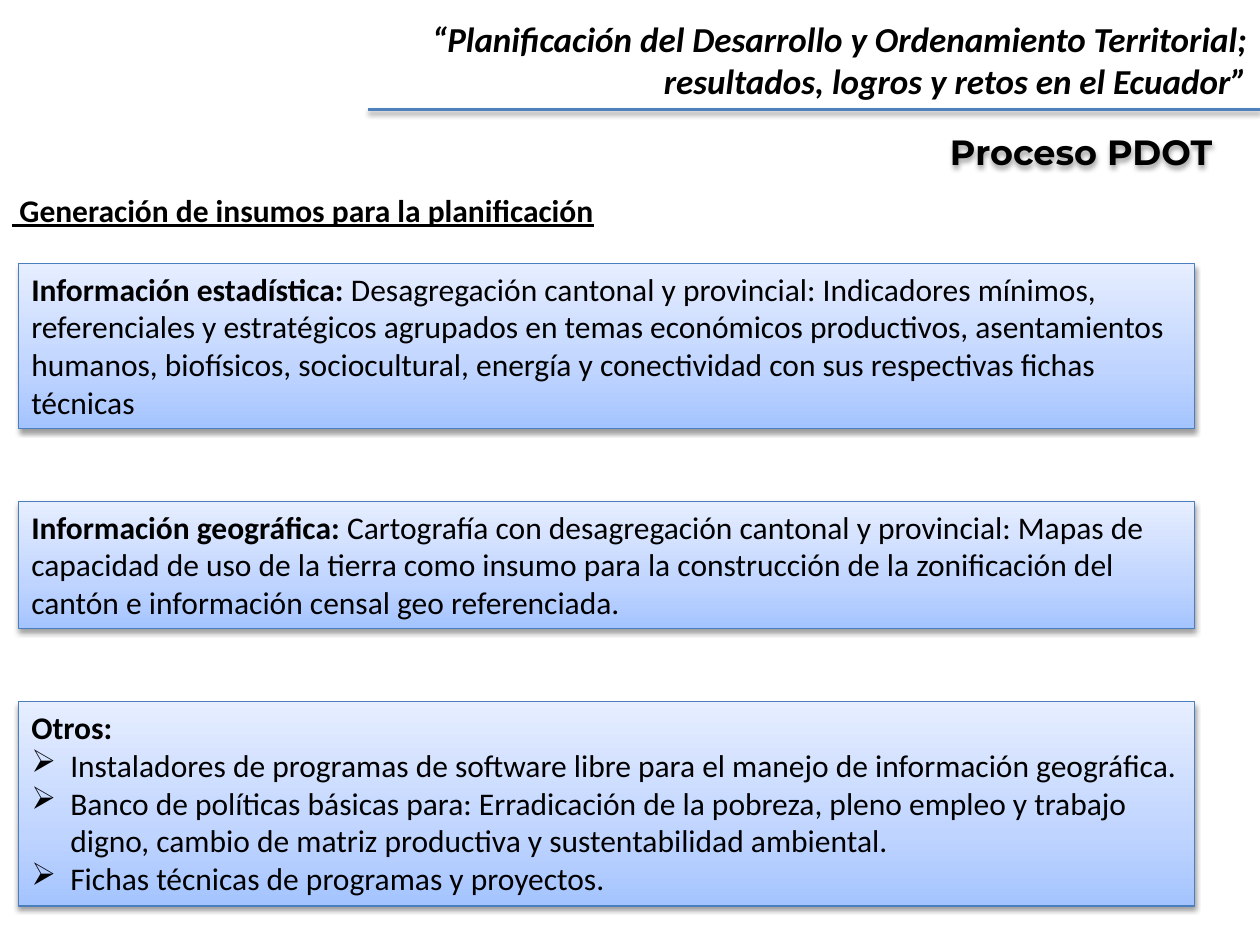
import pptx
import pptx.util
import pptx.dml.color
import pptx.enum.shapes
import pptx.enum.text
import pptx.oxml
import pptx.oxml.ns
from pptx.util import Inches

# Content
HEAD = ["“Planificación del Desarrollo y Ordenamiento Territorial;",
        "resultados, logros y retos en el Ecuador”"]
TITLE = "Proceso PDOT "
TOPIC = " Generación de insumos para la planificación"
# Each panel: height, bold lead, running text, bullets
PANELS = [
    (1.31, "Información estadística: ",
     "Desagregación cantonal y provincial: Indicadores mínimos, referenciales y "
     "estratégicos agrupados en temas económicos productivos, asentamientos humanos, "
     "biofísicos, sociocultural, energía y conectividad con sus respectivas fichas "
     "técnicas", []),
    (1.01, "Información geográfica: ",
     "Cartografía con desagregación cantonal y provincial: Mapas de capacidad de uso "
     "de la tierra como insumo para la construcción de la zonificación del cantón e "
     "información censal geo referenciada.", []),
    (1.62, "Otros:", "", [
        "Instaladores de programas de software libre para el manejo de información "
        "geográfica.",
        "Banco de políticas básicas para: Erradicación de la pobreza, pleno empleo y "
        "trabajo digno, cambio de matriz productiva y sustentabilidad ambiental.",
        "Fichas técnicas de programas y proyectos."]),
]
LEFT, TOP, WIDTH, GAP = 0.15, 2.09, 9.33, 0.58

# Theme
THEME = {
    "ink": "000000", "rule": "4F81BD", "edge": "4B7EBC",
    "fade": [(0, "A4C4FF"), (35, "BFD4FF"), (100, "E6EEFF")],
    "head": {"name": "Calibri", "size": pptx.util.Pt(20), "bold": True, "italic": True},
    "title": {"name": "Montserrat", "size": pptx.util.Pt(20), "bold": True},
    "topic": {"name": "Calibri", "size": pptx.util.Pt(18), "bold": True,
              "underline": True},
    "lead": {"name": "Calibri", "size": pptx.util.Pt(18), "bold": True},
    "body": {"name": "Calibri", "size": pptx.util.Pt(18), "bold": False},
}
ALIGN = pptx.enum.text.PP_ALIGN
ANCHOR = pptx.enum.text.MSO_ANCHOR
FIT = pptx.enum.text.MSO_AUTO_SIZE
NS = pptx.oxml.ns.nsdecls("a")


def tint(code):
    return pptx.dml.color.RGBColor.from_string(code)


def write(para, text, style):
    run = para.add_run()
    run.text = text
    for key, value in THEME[style].items():
        setattr(run.font, key, value)
    run.font.color.rgb = tint(THEME["ink"])


def setup(frame, fit=FIT.SHAPE_TO_FIT_TEXT, anchor=ANCHOR.TOP):
    values = {"word_wrap": True, "auto_size": fit, "vertical_anchor": anchor}
    for key, value in values.items():
        setattr(frame, key, value)
    return frame


def shade(shape):
    shape._element.spPr.append(pptx.oxml.parse_xml(
        f'<a:effectLst {NS}><a:outerShdw blurRad="39400" dist="20300" dir="5400000" '
        'rotWithShape="0"><a:srgbClr val="000000"><a:alpha val="38000"/></a:srgbClr>'
        '</a:outerShdw></a:effectLst>'))


def fade(shape):
    stops = "".join(f'<a:gs pos="{pos * 1000}"><a:srgbClr val="{code}"/></a:gs>'
                    for pos, code in THEME["fade"])
    shape._element.spPr.append(pptx.oxml.parse_xml(
        f'<a:gradFill {NS} rotWithShape="1"><a:gsLst>{stops}</a:gsLst>'
        '<a:lin ang="16200000" scaled="0"/></a:gradFill>'))


def stroke(shape, code, width):
    shape.line.color.rgb = tint(code)
    shape.line.width = pptx.util.Pt(width)


def bullet(para):
    props = para._p.get_or_add_pPr()
    props.set("marL", str(Inches(0.31)))
    props.set("indent", str(Inches(-0.31)))
    props.append(pptx.oxml.parse_xml(f'<a:buChar {NS} char="➢"/>'))


deck = pptx.Presentation()
deck.slide_width, deck.slide_height = Inches(10), Inches(7.5)
slide = deck.slides.add_slide(deck.slide_layouts[5])
shapes = slide.shapes

# Header rule
rule = shapes.add_connector(pptx.enum.shapes.MSO_CONNECTOR.STRAIGHT,
                            Inches(2.92), Inches(0.87), Inches(10), Inches(0.87))
stroke(rule, THEME["rule"], 2)
shade(rule)

# Event name
box = shapes.add_textbox(Inches(1.68), Inches(0.09), Inches(8.32), Inches(0.77))
frame = setup(box.text_frame)
for i, line in enumerate(HEAD):
    para = frame.add_paragraph() if i else frame.paragraphs[0]
    para.alignment = ALIGN.RIGHT
    write(para, line, "head")

# Topic
box = shapes.add_textbox(Inches(0), Inches(1.5), Inches(6.56), Inches(0.65))
para = setup(box.text_frame).paragraphs[0]
para.alignment = ALIGN.JUSTIFY
para.line_spacing = 0.9
write(para, TOPIC, "topic")

# Panels stacked with equal gaps
top = TOP
for height, lead, text, items in PANELS:
    panel = shapes.add_shape(pptx.enum.shapes.MSO_SHAPE.RECTANGLE, Inches(LEFT),
                             Inches(top), Inches(WIDTH), Inches(height))
    fade(panel)
    stroke(panel, THEME["edge"], 0.75)
    shade(panel)
    frame = setup(panel.text_frame)
    para = frame.paragraphs[0]
    para.alignment = ALIGN.LEFT
    write(para, lead, "lead")
    if text:
        write(para, text, "body")
    for item in items:
        para = frame.add_paragraph()
        para.alignment = ALIGN.LEFT
        bullet(para)
        write(para, item, "body")
    top += height + GAP

# Title
title = shapes.title
place = {"left": 6.22, "top": 0.9, "width": 4.8, "height": 0.61}
for key, value in place.items():
    setattr(title, key, Inches(value))
shade(title)
para = setup(title.text_frame, FIT.NONE, ANCHOR.MIDDLE).paragraphs[0]
para.alignment = ALIGN.CENTER
write(para, TITLE, "title")

deck.save("out.pptx")
